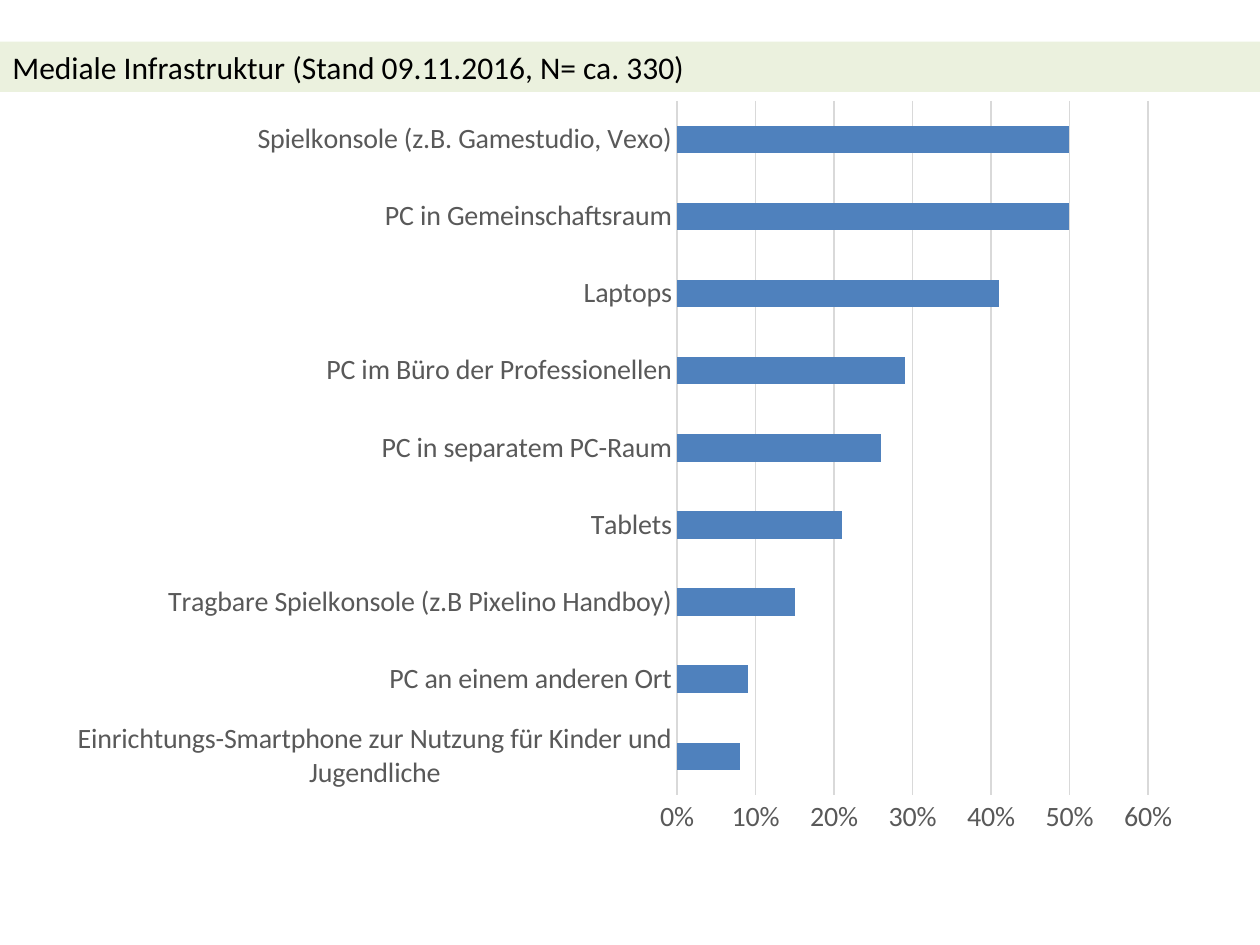
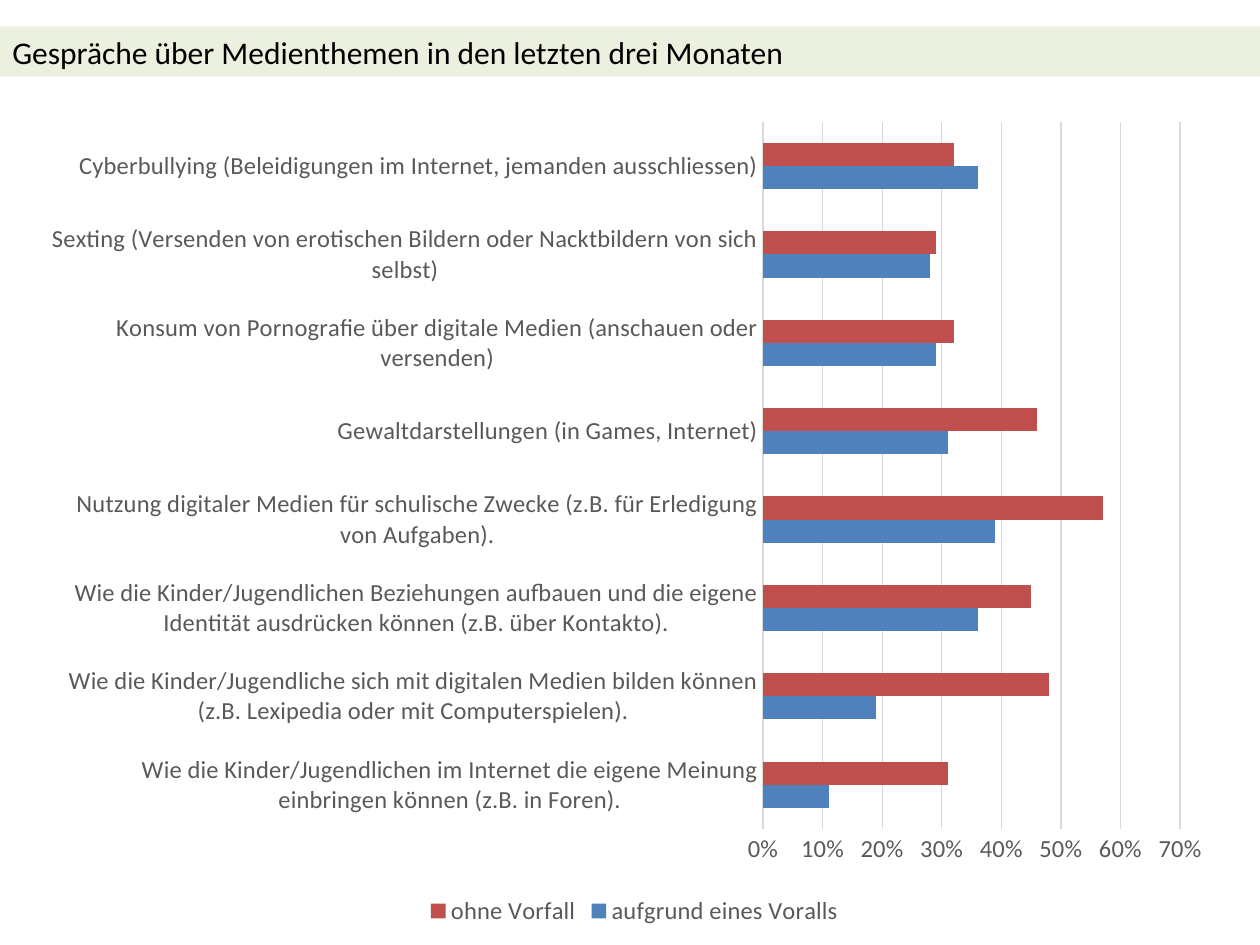
from dataclasses import dataclass

from lxml import etree
from pptx import Presentation
from pptx.chart.chart import Chart
from pptx.chart.data import CategoryChartData
from pptx.dml.color import RGBColor
from pptx.enum.chart import XL_CHART_TYPE, XL_LEGEND_POSITION, XL_TICK_MARK
from pptx.enum.text import MSO_ANCHOR
from pptx.oxml.ns import qn
from pptx.util import Inches, Pt

BARS = XL_CHART_TYPE.BAR_CLUSTERED
LEGEND_BOTTOM = XL_LEGEND_POSITION.BOTTOM
NO_TICKS = XL_TICK_MARK.NONE
MIDDLE = MSO_ANCHOR.MIDDLE

SLIDE_WIDTH, SLIDE_HEIGHT = Inches(10), Inches(7.5)
BLANK_LAYOUT = 6
FONT = "Calibri"
COLORS = {
    "title": "000000",
    "band": "EBF1DE",
    "label": "595959",
    "grid": "D9D9D9",
    "blue": "4F81BD",
    "red": "C0504D",
}
SERIES_COLORS = ("blue", "red")


@dataclass(frozen=True)
class Area:
    """A rectangle in percent of the slide's width and height."""
    left: float
    top: float
    width: float
    height: float

    def on_slide(self) -> tuple[int, int, int, int]:
        return (
            int(SLIDE_WIDTH * self.left / 100),
            int(SLIDE_HEIGHT * self.top / 100),
            int(SLIDE_WIDTH * self.width / 100),
            int(SLIDE_HEIGHT * self.height / 100),
        )

    def shares_of(self, outer: "Area") -> dict[str, float]:
        return {
            "x": (self.left - outer.left) / outer.width,
            "y": (self.top - outer.top) / outer.height,
            "w": self.width / outer.width,
            "h": self.height / outer.height,
        }


@dataclass(frozen=True)
class Survey:
    """One slide: a title band and a bar chart, answers listed bottom to top."""
    title: str
    band: Area
    chart: Area
    plot: Area
    font_size: int
    axis_max: float
    groups: tuple[str, ...]
    answers: dict[str, tuple[float, ...]]


SURVEYS = (
    Survey(
        title="Mediale Infrastruktur (Stand 09.11.2016, N= ca. 330)",
        band=Area(0, 4.4, 100, 5.33),
        chart=Area(4.3, 9.07, 90.6, 80.8),
        plot=Area(53.73, 10.69, 37.38, 73.44),
        font_size=16,
        axis_max=0.6,
        groups=("Series 1",),
        answers={
            "Einrichtungs-Smartphone zur Nutzung für Kinder und Jugendliche": (0.08,),
            "PC an einem anderen Ort": (0.09,),
            "Tragbare Spielkonsole (z.B Pixelino Handboy)": (0.15,),
            "Tablets": (0.21,),
            "PC in separatem PC-Raum": (0.26,),
            "PC im Büro der Professionellen": (0.29,),
            "Laptops": (0.41,),
            "PC in Gemeinschaftsraum": (0.5,),
            "Spielkonsole (z.B. Gamestudio, Vexo)": (0.5,),
        },
    ),
    Survey(
        title="Gespräche über Medienthemen in den letzten drei Monaten",
        band=Area(0, 2.8, 100, 5.33),
        chart=Area(3.5, 11.2, 93.7, 87.33),
        plot=Area(60.56, 12.91, 33.1, 74.81),
        font_size=14,
        axis_max=0.7,
        groups=("aufgrund eines Voralls", "ohne Vorfall"),
        answers={
            "Wie die Kinder/Jugendlichen im Internet die eigene Meinung "
            "einbringen können (z.B. in Foren).": (0.11, 0.31),
            "Wie die Kinder/Jugendliche sich mit digitalen Medien bilden können "
            "(z.B. Lexipedia oder mit Computerspielen).": (0.19, 0.48),
            "Wie die Kinder/Jugendlichen Beziehungen aufbauen und die eigene "
            "Identität ausdrücken können (z.B. über Kontakto).": (0.36, 0.45),
            "Nutzung digitaler Medien für schulische Zwecke "
            "(z.B. für Erledigung von Aufgaben).": (0.39, 0.57),
            "Gewaltdarstellungen (in Games, Internet)": (0.31, 0.46),
            "Konsum von Pornografie über digitale Medien "
            "(anschauen oder versenden)": (0.29, 0.32),
            "Sexting (Versenden von erotischen Bildern oder Nacktbildern "
            "von sich selbst)": (0.28, 0.29),
            "Cyberbullying (Beleidigungen im Internet, jemanden "
            "ausschliessen)": (0.36, 0.32),
        },
    ),
)


def color(name: str) -> RGBColor:
    return RGBColor.from_string(COLORS[name])


def add_title_band(slide, survey: Survey) -> None:
    band = slide.shapes.add_textbox(*survey.band.on_slide())
    band.fill.solid()
    band.fill.fore_color.rgb = color("band")
    frame = band.text_frame
    frame.word_wrap = True
    frame.vertical_anchor = MIDDLE
    run = frame.paragraphs[0].add_run()
    run.text = survey.title
    run.font.name = FONT
    run.font.size = Pt(18)
    run.font.color.rgb = color("title")


def place_plot(chart: Chart, shares: dict[str, float]) -> None:
    """Fix the inner plot area, given in shares of the chart."""
    plot_area = chart.element.find(f".//{qn('c:plotArea')}")
    for automatic in plot_area.findall(qn("c:layout")):
        plot_area.remove(automatic)
    layout = etree.Element(qn("c:layout"))
    manual = etree.SubElement(layout, qn("c:manualLayout"))
    settings = {"layoutTarget": "inner", "xMode": "edge", "yMode": "edge"}
    settings |= {side: f"{share:.4f}" for side, share in shares.items()}
    for tag, value in settings.items():
        etree.SubElement(manual, qn(f"c:{tag}")).set("val", value)
    plot_area.insert(0, layout)


def style_axes(chart: Chart, axis_max: float) -> None:
    for axis in (chart.category_axis, chart.value_axis):
        axis.major_tick_mark = axis.minor_tick_mark = NO_TICKS
    values = chart.value_axis
    values.minimum_scale, values.maximum_scale = 0, axis_max
    values.major_unit = 0.1
    values.tick_labels.number_format = "0%"
    values.tick_labels.number_format_is_linked = False
    values.format.line.fill.background()
    values.has_major_gridlines = True
    for line in (chart.category_axis.format.line, values.major_gridlines.format.line):
        line.color.rgb = color("grid")
        line.width = Pt(0.75)


def add_bar_chart(slide, survey: Survey) -> None:
    data = CategoryChartData(number_format="0%")
    data.categories = survey.answers.keys()
    for group, shares in zip(survey.groups, zip(*survey.answers.values())):
        data.add_series(group, shares)
    chart = slide.shapes.add_chart(BARS, *survey.chart.on_slide(), data).chart
    chart.has_title = False
    chart.font.name = FONT
    chart.font.size = Pt(survey.font_size)
    chart.font.color.rgb = color("label")

    bars = chart.plots[0]
    bars.gap_width = 182
    bars.vary_by_categories = False
    for series, name in zip(bars.series, SERIES_COLORS):
        series.format.fill.solid()
        series.format.fill.fore_color.rgb = color(name)

    style_axes(chart, survey.axis_max)
    place_plot(chart, survey.plot.shares_of(survey.chart))
    chart.has_legend = len(survey.groups) > 1
    if chart.has_legend:
        chart.legend.position = LEGEND_BOTTOM
        chart.legend.include_in_layout = False


def main() -> None:
    deck = Presentation()
    deck.slide_width, deck.slide_height = SLIDE_WIDTH, SLIDE_HEIGHT
    for survey in SURVEYS:
        slide = deck.slides.add_slide(deck.slide_layouts[BLANK_LAYOUT])
        add_bar_chart(slide, survey)
        add_title_band(slide, survey)
    deck.save("out.pptx")


if __name__ == "__main__":
    main()
